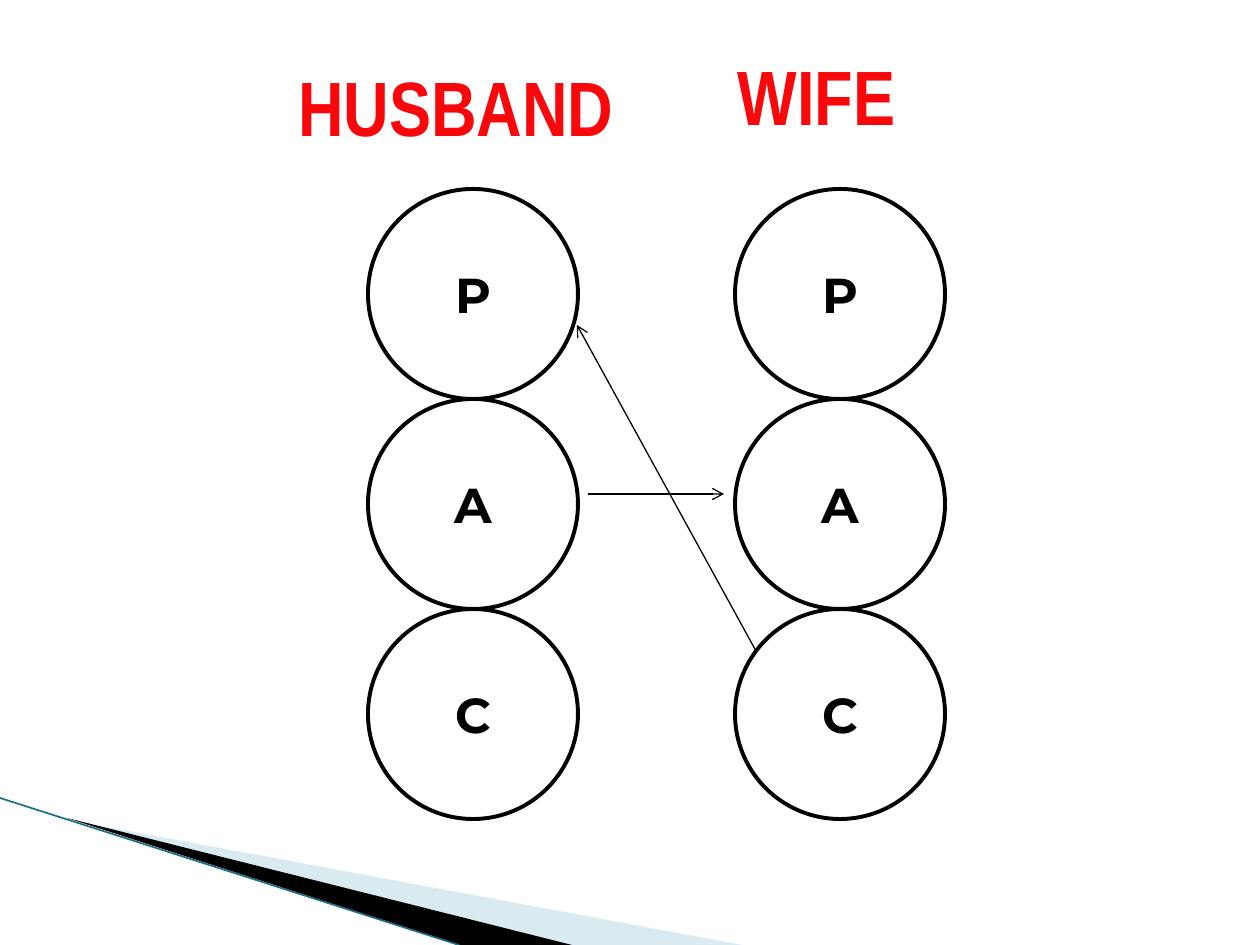
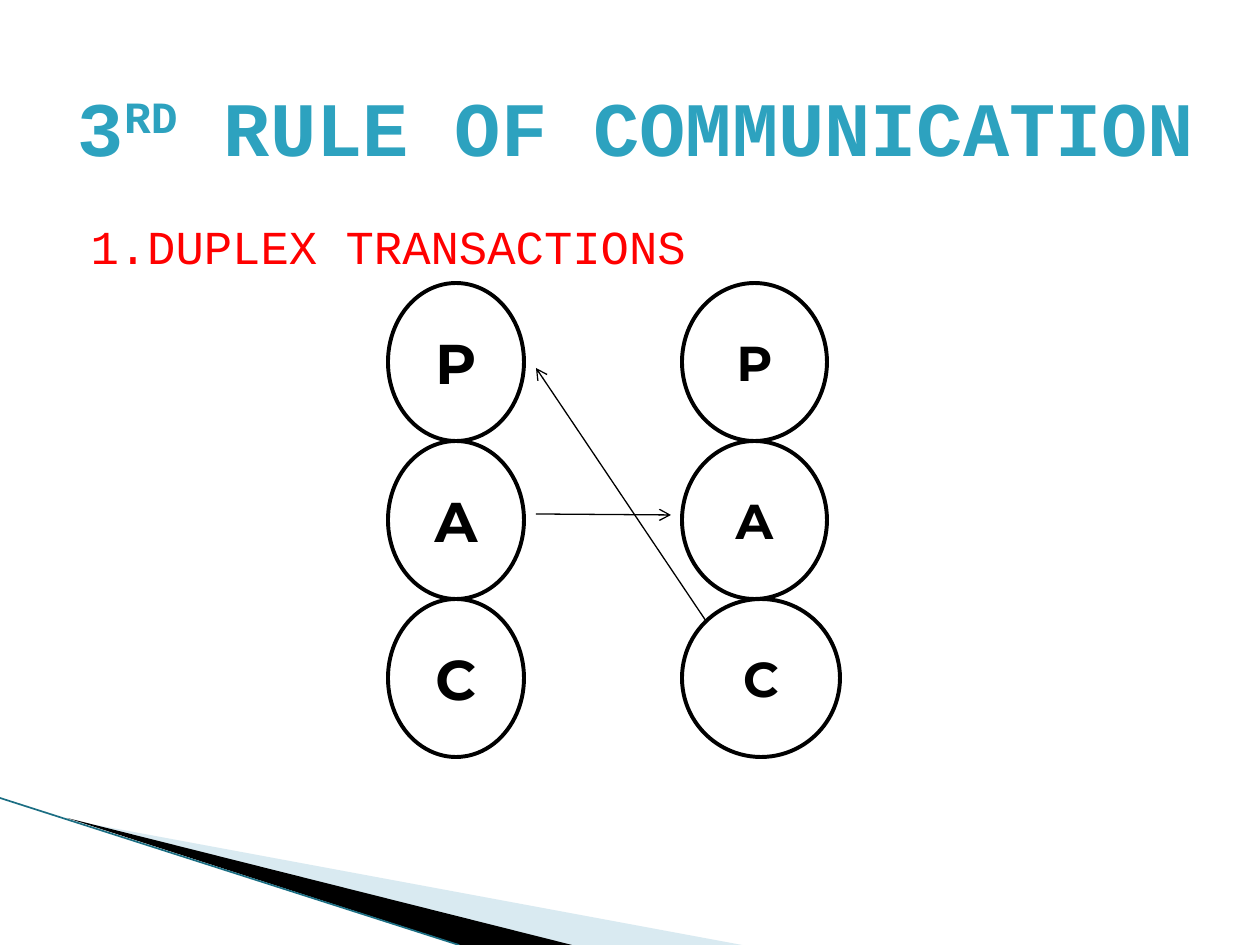
from lxml.etree import SubElement
from pptx import Presentation
from pptx.dml.color import RGBColor as Rgb
from pptx.enum.shapes import MSO_CONNECTOR as Conn, MSO_SHAPE as Shape
from pptx.enum.text import MSO_ANCHOR as Anchor, PP_ALIGN as Align
from pptx.oxml.ns import qn
from pptx.util import Pt

PX = 914400 / 126
WIDE, HIGH = 1260, 945

BLACK, RED, BRIGHT, TEAL = "000000", "F8070B", "FF0000", "2DA2BF"
PALE, EDGE = "A0CBDC", "1B6E83"

STATES = ["P", "A", "C"]

WEDGES = [
    {"points": [(69, 820), (742, 945), (570, 945)], "tint": PALE, "alpha": 40},
    {"points": [(67, 818), (572, 945), (460, 945)], "tint": BLACK, "alpha": 100},
]
RIM = ((0, 798), (459, 945))

HEAD = {"size": 44, "bold": True}
NAME = {**HEAD, "name": "Arial Narrow", "tint": RED}
TITLE = {**HEAD, "name": "Courier New", "tint": TEAL}
POINT = {"size": 27, "name": "Courier New", "tint": BRIGHT}
STATE = {"bold": True, "name": "Montserrat", "tint": BLACK}

# Texts: runs of (words, raise in percent), box, format, alignment, left indent.
# Stacks: left, top, step, widths from top to bottom, letter size.
SLIDES = [
    {
        "texts": [
            ([("HUSBAND", 0)], (284, 53, 344, 106), NAME, Align.CENTER, 0),
            ([("WIFE", 0)], (724, 42, 185, 106), NAME, Align.CENTER, 0),
        ],
        "stacks": [
            (368, 189, 210, [210, 210, 210], 28),
            (735, 189, 210, [210, 210, 210], 28),
        ],
        "arrows": [((588, 494), (724, 494)), ((756, 651), (577, 325))],
    },
    {
        "texts": [
            ([("3", 0), ("RD", 30), (" RULE OF COMMUNICATION", 0)],
             (42, 73, 1189, 106), TITLE, Align.CENTER, 0),
            ([("1.DUPLEX TRANSACTIONS", 0)],
             (63, 211, 1134, 70), POINT, Align.LEFT, 15),
        ],
        "stacks": [
            (388, 283, 158, [136, 136, 136], 32),
            (682, 283, 158, [145, 145, 158], 28),
        ],
        "arrows": [((536, 514), (671, 515)), ((706, 621), (536, 368))],
    },
]


def emu(*sizes):
    return [round(size * PX) for size in sizes]


def hue(code):
    return Rgb.from_string(code)


def style(font, form):
    for key, value in form.items():
        if key == "tint":
            font.color.rgb = hue(value)
        else:
            setattr(font, key, Pt(value) if key == "size" else value)


def add_line(slide, ends, tint, width, arrow=False):
    start, end = ends
    line = slide.shapes.add_connector(Conn.STRAIGHT, *emu(*start, *end))
    line.line.color.rgb = hue(tint)
    line.line.width = Pt(width)
    props = line._element.spPr
    if arrow:
        SubElement(props.find(qn("a:ln")), qn("a:tailEnd"), type="arrow")
    SubElement(props, qn("a:effectLst"))


def add_wedge(slide, points, tint, alpha):
    draft = slide.shapes.build_freeform(*points[0], scale=PX)
    draft.add_line_segments(points[1:], close=True)
    wedge = draft.convert_to_shape()
    wedge.shadow.inherit = False
    wedge.line.fill.background()
    wedge.fill.solid()
    wedge.fill.fore_color.rgb = hue(tint)
    if alpha < 100:
        color = wedge._element.spPr.find(qn("a:solidFill"))[0]
        SubElement(color, qn("a:alpha"), val=str(alpha * 1000))


def add_band(slide):
    for wedge in WEDGES:
        add_wedge(slide, **wedge)
    add_line(slide, RIM, EDGE, 0.95)


def add_text(slide, runs, box, form, align, indent):
    frame = slide.shapes.add_textbox(*emu(*box)).text_frame
    frame.word_wrap = align == Align.LEFT
    frame.margin_left += emu(indent)[0]
    para = frame.paragraphs[0]
    para.alignment = align
    for words, lift in runs:
        run = para.add_run()
        run.text = words
        style(run.font, form)
        if lift:
            run.font._element.set("baseline", str(lift * 1000))


def add_stack(slide, left, top, step, widths, size):
    """Draw the three states as touching ovals, one below the other."""
    for row, (state, width) in enumerate(zip(STATES, widths)):
        box = emu(left, top + row * step, width, step)
        oval = slide.shapes.add_shape(Shape.OVAL, *box)
        oval.shadow.inherit = False
        oval.fill.background()
        oval.line.color.rgb = hue(BLACK)
        oval.line.width = Pt(2.25)
        frame = oval.text_frame
        frame.word_wrap = False
        frame.vertical_anchor = Anchor.MIDDLE
        para = frame.paragraphs[0]
        para.alignment = Align.CENTER
        run = para.add_run()
        run.text = state
        style(run.font, {**STATE, "size": size})


def main():
    deck = Presentation()
    deck.slide_width, deck.slide_height = emu(WIDE, HIGH)
    for parts in SLIDES:
        slide = deck.slides.add_slide(deck.slide_layouts[6])
        add_band(slide)
        for stack in parts["stacks"]:
            add_stack(slide, *stack)
        for ends in parts["arrows"]:
            add_line(slide, ends, BLACK, 0.75, arrow=True)
        for text in parts["texts"]:
            add_text(slide, *text)
    deck.save("out.pptx")


if __name__ == "__main__":
    main()
